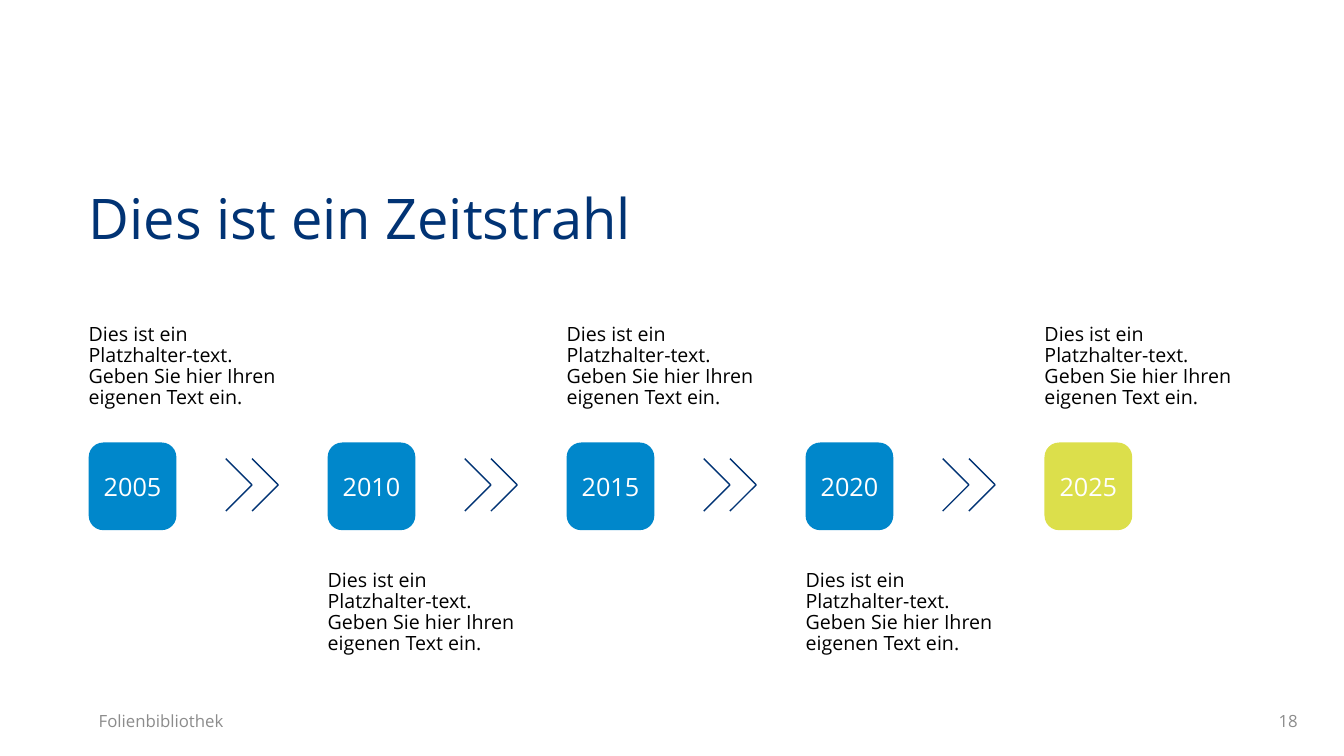
"""Build a timeline slide with five milestones."""
from dataclasses import dataclass

import lxml.etree
import pptx
import pptx.dml.color
import pptx.enum.shapes
import pptx.enum.text
import pptx.oxml.ns
import pptx.presentation
import pptx.shapes.autoshape
import pptx.slide
import pptx.util

Inches = pptx.util.Inches
Align = pptx.enum.text.PP_ALIGN
Anchor = pptx.enum.text.MSO_ANCHOR


@dataclass(frozen=True)
class Theme:
    """Colours and type sizes of the slide."""

    font: str = "Open Sans"
    navy: str = "013374"
    blue: str = "0087CB"
    lime: str = "DCDF4B"
    white: str = "FFFFFF"
    black: str = "000000"
    grey: str = "8C8C8C"
    title_size: int = 40
    year_size: int = 18
    caption_size: int = 14
    footer_size: int = 12


@dataclass(frozen=True)
class Milestone:
    """One year on the timeline with its caption."""

    year: str
    color: str
    caption_above: bool


@dataclass(frozen=True)
class TextStyle:
    """Formatting of a text frame with one paragraph."""

    size: int
    color: str
    align: Align = Align.LEFT
    anchor: Anchor = Anchor.TOP
    line_spacing: float = 1.0
    side_margin: float = 0
    top_margin: float = 0


THEME = Theme()
MARGIN_LEFT = 0.88
STEP = 2.37
TILE_TOP = 4.39
TILE_SIZE = 0.87
CAPTION_WIDTH = 2.06
CAPTION_HEIGHT = 1.06
CAPTION_ABOVE_TOP = 3.0
CAPTION_BELOW_TOP = 5.66
CHEVRON_OFFSET = 1.36
CHEVRON_CENTER = 4.81
CHEVRON_ARM = 0.26
FOOTER_TOP = 6.95
FOOTER_HEIGHT = 0.4
CAPTION = "Dies ist ein Platzhalter-text. Geben Sie hier Ihren eigenen Text ein."
MILESTONES = [
    Milestone("2005", THEME.blue, True),
    Milestone("2010", THEME.blue, False),
    Milestone("2015", THEME.blue, True),
    Milestone("2020", THEME.blue, False),
    Milestone("2025", THEME.lime, True),
]


def rgb(color: str) -> pptx.dml.color.RGBColor:
    """Return the colour object for a hex value."""
    return pptx.dml.color.RGBColor.from_string(color)


def write_text(shape: pptx.shapes.autoshape.Shape, text: str, style: TextStyle) -> None:
    """Write and format the text of a shape."""
    frame = shape.text_frame
    frame.text = text
    frame.word_wrap = True
    frame.auto_size = pptx.enum.text.MSO_AUTO_SIZE.NONE
    frame.vertical_anchor = style.anchor
    frame.margin_left = frame.margin_right = Inches(style.side_margin)
    frame.margin_top = frame.margin_bottom = Inches(style.top_margin)
    paragraph = frame.paragraphs[0]
    paragraph.alignment = style.align
    paragraph.line_spacing = style.line_spacing
    paragraph.font.name = THEME.font
    paragraph.font.size = pptx.util.Pt(style.size)
    paragraph.font.color.rgb = rgb(style.color)


def add_text(slide: pptx.slide.Slide, left: float, top: float, width: float,
             height: float, text: str, style: TextStyle) -> None:
    """Add a text box."""
    box = slide.shapes.add_textbox(Inches(left), Inches(top), Inches(width), Inches(height))
    write_text(box, text, style)


def add_title(slide: pptx.slide.Slide) -> None:
    """Place and fill the title placeholder."""
    title = slide.shapes.title
    title.left, title.top = Inches(MARGIN_LEFT), Inches(1.9)
    title.width, title.height = Inches(11.54), Inches(0.9)
    write_text(title, "Dies ist ein Zeitstrahl",
               TextStyle(THEME.title_size, THEME.navy, line_spacing=0.9))


def add_milestone(slide: pptx.slide.Slide, left: float, milestone: Milestone) -> None:
    """Add a year tile and its caption above or below."""
    tile = slide.shapes.add_shape(
        pptx.enum.shapes.MSO_SHAPE.ROUNDED_RECTANGLE,
        Inches(left), Inches(TILE_TOP), Inches(TILE_SIZE), Inches(TILE_SIZE))
    tile.shadow.inherit = False
    tile.fill.solid()
    tile.fill.fore_color.rgb = rgb(milestone.color)
    tile.line.fill.background()
    write_text(tile, milestone.year,
               TextStyle(THEME.year_size, THEME.white, Align.CENTER, Anchor.MIDDLE))
    top = CAPTION_ABOVE_TOP if milestone.caption_above else CAPTION_BELOW_TOP
    anchor = Anchor.BOTTOM if milestone.caption_above else Anchor.TOP
    add_text(slide, left, top, CAPTION_WIDTH, CAPTION_HEIGHT, CAPTION,
             TextStyle(THEME.caption_size, THEME.black, anchor=anchor, line_spacing=0.9))


def add_double_chevron(slide: pptx.slide.Slide, left: float) -> None:
    """Add a group of two open chevrons pointing right."""
    group = slide.shapes.add_group_shape()
    for start in (left, left + CHEVRON_ARM):
        for rise in (CHEVRON_ARM, -CHEVRON_ARM):
            arm = group.shapes.add_connector(
                pptx.enum.shapes.MSO_CONNECTOR.STRAIGHT,
                Inches(start), Inches(CHEVRON_CENTER + rise),
                Inches(start + CHEVRON_ARM), Inches(CHEVRON_CENTER))
            arm.line.color.rgb = rgb(THEME.navy)
            arm.line.width = pptx.util.Pt(1)
            properties = arm._element.spPr
            lxml.etree.SubElement(properties, pptx.oxml.ns.qn("a:effectLst"))


def add_footer(slide: pptx.slide.Slide) -> None:
    """Add the footer text and the page number."""
    for left, width, text, align in (
        (MARGIN_LEFT, 8.04, "Folienbibliothek", Align.LEFT),
        (9.97, 3.0, "18", Align.RIGHT),
    ):
        add_text(slide, left, FOOTER_TOP, width, FOOTER_HEIGHT, text,
                 TextStyle(THEME.footer_size, THEME.grey, align, Anchor.MIDDLE,
                           side_margin=0.1, top_margin=0.05))


def main() -> None:
    """Create and save the presentation."""
    presentation = pptx.Presentation()
    presentation.slide_width = Inches(13.33)
    presentation.slide_height = Inches(7.5)
    slide = presentation.slides.add_slide(presentation.slide_layouts.get_by_name("Title Only"))
    add_footer(slide)
    add_title(slide)
    for index, milestone in enumerate(MILESTONES):
        add_milestone(slide, MARGIN_LEFT + index * STEP, milestone)
    for index in range(len(MILESTONES) - 1):
        add_double_chevron(slide, MARGIN_LEFT + index * STEP + CHEVRON_OFFSET)
    presentation.save("out.pptx")


if __name__ == "__main__":
    main()
